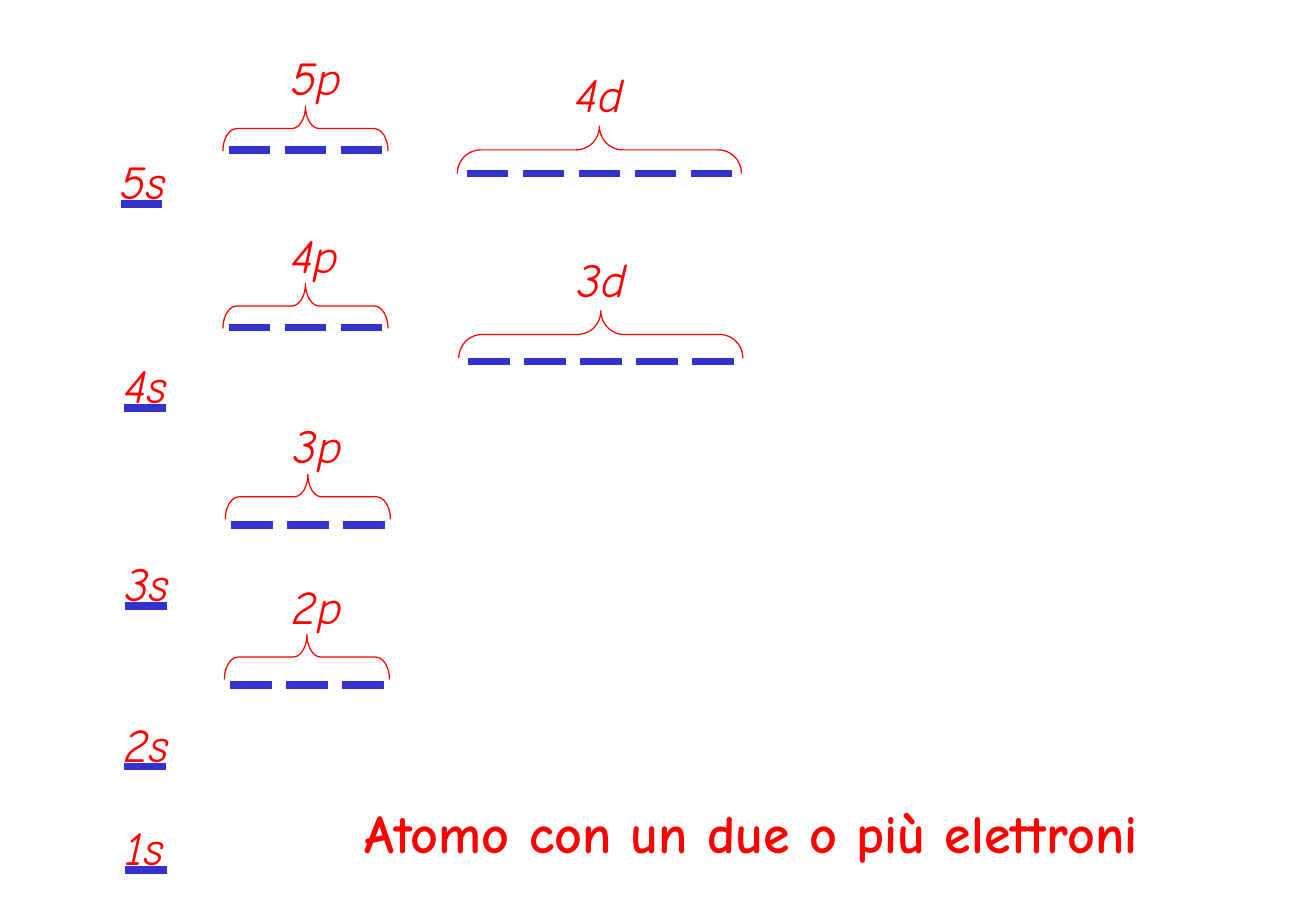
from typing import NamedTuple

from lxml import etree
from pptx import Presentation
from pptx.dml.color import RGBColor
from pptx.enum.shapes import MSO_CONNECTOR, MSO_SHAPE
from pptx.enum.text import MSO_ANCHOR, MSO_AUTO_SIZE, PP_ALIGN
from pptx.oxml.ns import qn
from pptx.util import Cm, Pt

RED = RGBColor(0xFF, 0x00, 0x00)
BLUE = RGBColor(0x33, 0x33, 0xCC)
FONT = "Comic Neue"
STRAIGHT = MSO_CONNECTOR.STRAIGHT
LEFT_BRACE = MSO_SHAPE.LEFT_BRACE
ALIGN_LEFT = PP_ALIGN.LEFT
ANCHOR_TOP = MSO_ANCHOR.TOP
NO_AUTOFIT = MSO_AUTO_SIZE.NONE

TITLE_ONLY = 5
ORBITAL_WIDTH = 0.87
ORBITAL_PITCH = 1.17
LABEL_HEIGHT = 1.45


class Subshell(NamedTuple):
    """Measures in cm shared by all subshells of one kind."""
    orbitals: int
    width: float
    brace_height: float
    brace_curve: float
    brace_drop: float
    label_shift: float
    label_width: float


P_SUBSHELL = Subshell(3, 3.45, 0.94, 0.303, 1.33, 0.55, 1.65)
D_SUBSHELL = Subshell(5, 5.94, 0.99, 0.494, 1.4, 0.74, 1.7)

S_LEVELS = [
    ("1s", 2.62, 18.19),
    ("2s", 2.59, 16.03),
    ("3s", 2.62, 12.67),
    ("4s", 2.59, 8.53),
    ("5s", 2.52, 4.27),
]
BRACED_LEVELS = [
    ("2p", P_SUBSHELL, 4.69, 11.94, 14.32),
    ("3p", P_SUBSHELL, 4.71, 8.59, 10.98),
    ("4p", P_SUBSHELL, 4.66, 4.6, 6.85),
    ("5p", P_SUBSHELL, 4.66, 0.89, 3.14),
    ("3d", D_SUBSHELL, 9.59, 5.1, 7.56),
    ("4d", D_SUBSHELL, 9.56, 1.24, 3.63),
]


def write(shape, text, size, bold=False, italic=False):
    """Put one left-aligned red line of text at the top of a shape."""
    frame = shape.text_frame
    frame.text = text
    frame.word_wrap = True
    frame.auto_size = NO_AUTOFIT
    frame.vertical_anchor = ANCHOR_TOP
    paragraph = frame.paragraphs[0]
    paragraph.alignment = ALIGN_LEFT
    font = paragraph.font
    font.name, font.size = FONT, Pt(size)
    font.bold, font.italic = bold, italic
    font.color.rgb = RED


def add_label(slide, text, left, top, width):
    """Name a subshell."""
    label = slide.shapes.add_textbox(Cm(left), Cm(top), Cm(width), Cm(LABEL_HEIGHT))
    write(label, text, 28, italic=True)


def add_orbital(slide, left, level):
    """Draw one orbital as a thick dash at its energy level."""
    orbital = slide.shapes.add_connector(
        STRAIGHT, Cm(left), Cm(level), Cm(left + ORBITAL_WIDTH), Cm(level))
    orbital.line.color.rgb = BLUE
    orbital.line.width = Pt(4.5)
    etree.SubElement(orbital._element.spPr, qn("a:effectLst"))


def add_s_level(slide, name, left, level):
    """Draw a single s orbital with its name above."""
    add_orbital(slide, left, level)
    add_label(slide, name, left - 0.24, level - 1.2, 1.6)


def add_braced_level(slide, name, kind, left, top, level):
    """Draw a row of orbitals under a brace and its name."""
    row_width = ORBITAL_PITCH * (kind.orbitals - 1) + ORBITAL_WIDTH
    first = left + (kind.width - row_width) / 2
    for index in range(kind.orbitals):
        add_orbital(slide, first + index * ORBITAL_PITCH, level)

    centre = left + kind.width / 2
    middle = top + kind.brace_drop + kind.brace_height / 2
    brace = slide.shapes.add_shape(
        LEFT_BRACE, Cm(centre - kind.brace_height / 2), Cm(middle - kind.width / 2),
        Cm(kind.brace_height), Cm(kind.width))
    brace.rotation = 90
    brace.adjustments[0] = kind.brace_curve
    brace.shadow.inherit = False
    brace.fill.background()
    brace.line.color.rgb = RED
    brace.line.width = Pt(0.75)

    add_label(slide, name, centre - kind.label_shift, top, kind.label_width)


def add_title(slide, left, top, width, height):
    """Place the slide title in the given box."""
    title = slide.shapes.title
    title.left, title.top = Cm(left), Cm(top)
    title.width, title.height = Cm(width), Cm(height)
    write(title, "Atomo con un due o più elettroni", 32, bold=True)


def main():
    """Build the energy level slide."""
    presentation = Presentation()
    presentation.slide_width, presentation.slide_height = Cm(27.51), Cm(19.05)
    slide = presentation.slides.add_slide(presentation.slide_layouts[TITLE_ONLY])
    add_title(slide, 7.37, 16.59, 18.49, 1.6)
    for s_level in S_LEVELS:
        add_s_level(slide, *s_level)
    for braced_level in BRACED_LEVELS:
        add_braced_level(slide, *braced_level)
    presentation.save("out.pptx")


if __name__ == "__main__":
    main()
